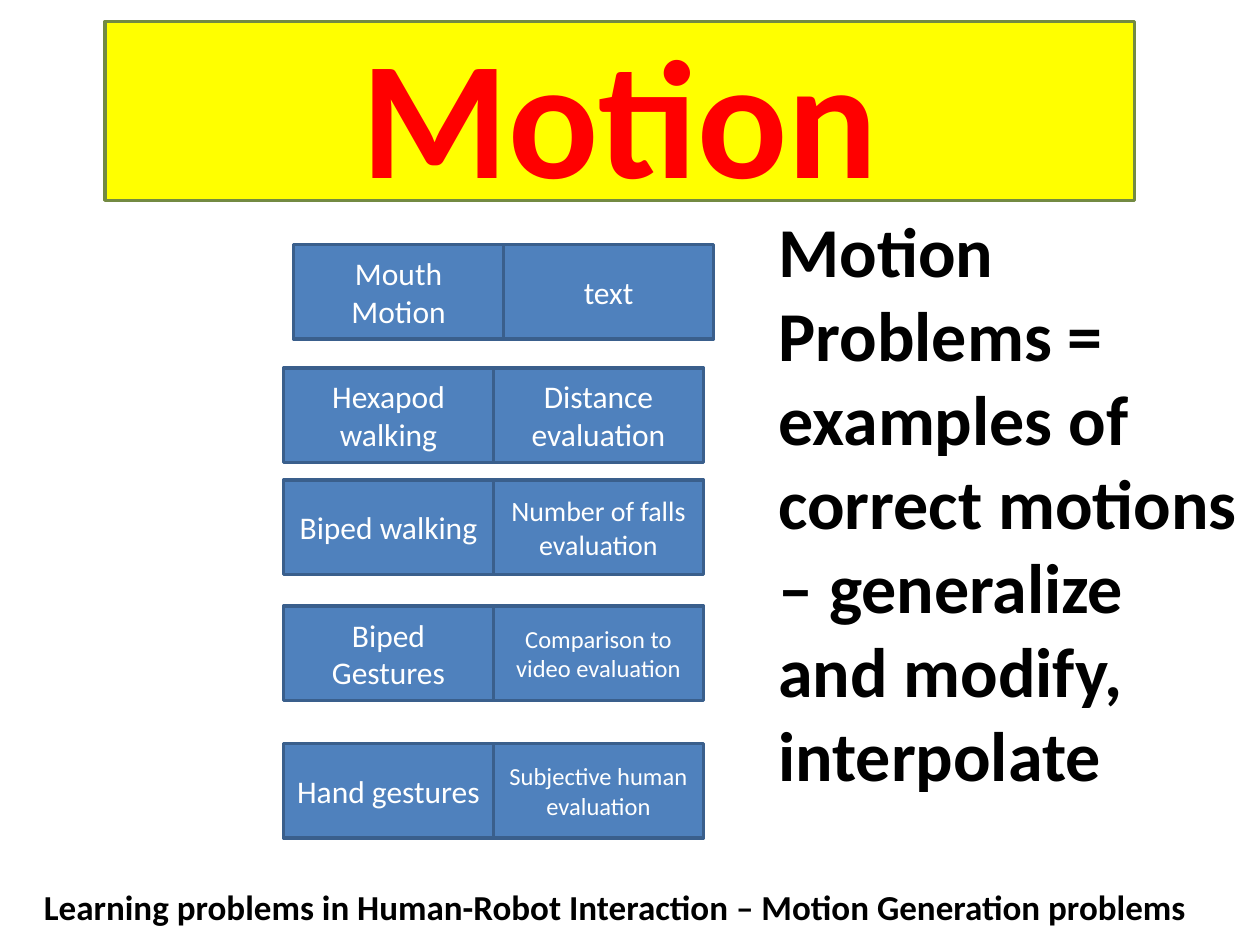
from lxml import etree
from pptx import Presentation, util as u
from pptx.dml.color import RGBColor
from pptx.enum import shapes, text
from pptx.oxml.ns import qn

COLORS = {
    "banner": "FFFF00", "banner_line": "738A42", "banner_text": "FF0000",
    "cell": "4F81BD", "cell_line": "3A5F8C", "cell_text": "FFFFFF",
    "body": "000000",
}
WIDTH, HEIGHT = 10, 7.5
CELL_W, CELL_H = WIDTH / 6, HEIGHT / 10

# left, top, motion problem, its evaluation, evaluation text size
PROBLEMS = [
    (2.33, 1.94, "Mouth\vMotion", "text", 18),
    (2.25, 2.92, "Hexapod walking", "Distance evaluation", 18),
    (2.25, 3.81, "Biped walking", "Number of falls\nevaluation", 16),
    (2.25, 4.81, "Biped Gestures", "Comparison to video evaluation", 14),
    (2.25, 5.9, "Hand gestures", "Subjective human evaluation", 14),
]


def inches(box):
    return [u.Inches(length) for length in box]


def color(name):
    return RGBColor.from_string(COLORS[name])


def write(shape, words, size, ink, bold=False, align=text.PP_ALIGN.CENTER,
          anchor=text.MSO_ANCHOR.MIDDLE, fit=text.MSO_AUTO_SIZE.NONE):
    frame = shape.text_frame
    frame.text = words
    frame.word_wrap = True
    frame.auto_size = fit
    frame.vertical_anchor = anchor
    for paragraph in frame.paragraphs:
        paragraph.alignment = align
        for run in paragraph.runs:
            run.font.name = "Calibri"
            run.font.size = u.Pt(size)
            run.font.bold = bold
            run.font.color.rgb = color(ink)


def paint(shape, fill, line):
    shape.fill.solid()
    shape.fill.fore_color.rgb = color(fill)
    shape.line.color.rgb = color(line)
    shape.line.width = u.Pt(2)


def add_banner(slide, box):
    """Turn the title placeholder into a rounded banner."""
    title = slide.shapes.title
    title.left, title.top, title.width, title.height = inches(box)
    outline = etree.Element(qn("a:prstGeom"), prst="roundRect")
    etree.SubElement(outline, qn("a:avLst"))
    title.element.spPr.find(qn("a:xfrm")).addnext(outline)
    paint(title, "banner", "banner_line")
    write(title, "Motion", 96, "banner_text", bold=True)


def add_problem(slide, left, top, problem, evaluation, evaluation_size):
    """Place a motion problem and, touching its right side, its evaluation."""
    for column, (words, size) in enumerate(
            [(problem, 18), (evaluation, evaluation_size)]):
        cell = slide.shapes.add_shape(
            shapes.MSO_SHAPE.RECTANGLE,
            *inches((left + column * CELL_W, top, CELL_W, CELL_H)))
        cell.shadow.inherit = False
        paint(cell, "cell", "cell_line")
        write(cell, words, size, "cell_text")


def add_statement(slide, box, words, size):
    statement = slide.shapes.add_textbox(*inches(box))
    write(statement, words, size, "body", bold=True,
          align=text.PP_ALIGN.LEFT, anchor=text.MSO_ANCHOR.TOP,
          fit=text.MSO_AUTO_SIZE.SHAPE_TO_FIT_TEXT)


def main():
    deck = Presentation()
    deck.slide_width, deck.slide_height = inches((WIDTH, HEIGHT))
    slide = deck.slides.add_slide(deck.slide_layouts.get_by_name("Title Only"))
    for problem in PROBLEMS:
        add_problem(slide, *problem)
    add_statement(slide, (0.25, 6.98, 9.42, 0.44),
                  "Learning problems in Human-Robot Interaction – "
                  "Motion Generation problems", 20)
    add_statement(slide, (6.08, 1.6, 3.92, 4.81),
                  "Motion Problems = examples of correct motions – "
                  "generalize and modify, interpolate", 40)
    add_banner(slide, (WIDTH / 12, 0.17, 8.17, 1.42))
    deck.save("out.pptx")


if __name__ == "__main__":
    main()
